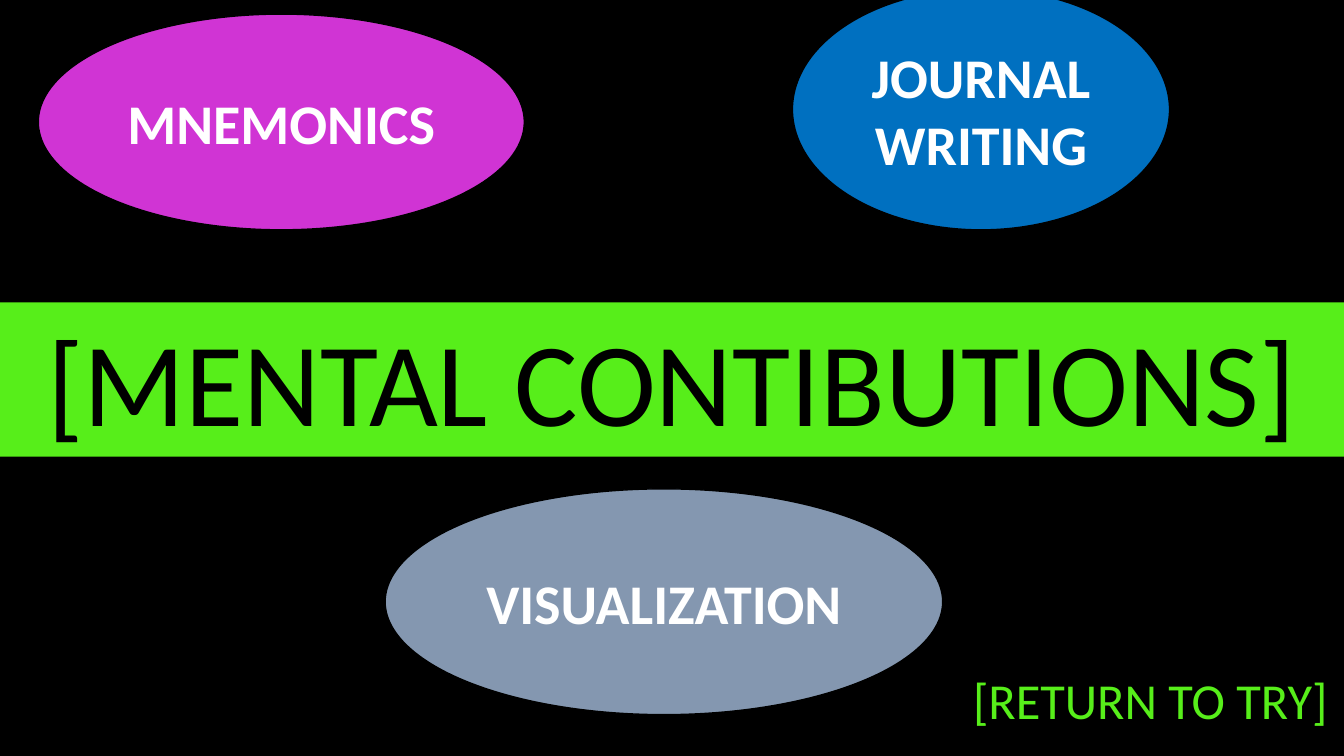
from dataclasses import dataclass

import pptx
import pptx.dml.color
import pptx.enum.shapes
import pptx.enum.text
import pptx.shapes.autoshape
import pptx.util

Inches = pptx.util.Inches
RGB = pptx.dml.color.RGBColor
Shape = pptx.shapes.autoshape.Shape


@dataclass(frozen=True)
class Theme:
    font: str = "Calibri"
    black: RGB = RGB(0x00, 0x00, 0x00)
    white: RGB = RGB(0xFF, 0xFF, 0xFF)
    green: RGB = RGB(0x57, 0xEE, 0x1A)
    magenta: RGB = RGB(0xD0, 0x34, 0xD4)
    slate: RGB = RGB(0x84, 0x97, 0xB0)
    blue: RGB = RGB(0x00, 0x70, 0xC0)
    title_size: int = 85
    strategy_size: int = 40
    return_size: int = 36


@dataclass(frozen=True)
class Strategy:
    label: str
    left: float
    top: float
    width: float
    height: float
    fill: RGB


THEME = Theme()
SLIDE_WIDTH = 13.33
STRATEGIES = [
    Strategy("MNEMONICS", 0.38, 0.14, 4.82, 2.14, THEME.magenta),
    Strategy("VISUALIZATION", 3.82, 4.85, 5.53, 2.24, THEME.slate),
    Strategy("JOURNAL WRITING", 7.86, -0.11, 3.74, 2.39, THEME.blue),
]


def write_centred(shape: Shape, text: str, size: int, color: RGB, bold: bool = False) -> None:
    frame = shape.text_frame
    frame.text = text
    frame.word_wrap = True
    paragraph = frame.paragraphs[0]
    paragraph.alignment = pptx.enum.text.PP_ALIGN.CENTER
    font = paragraph.runs[0].font
    font.name = THEME.font
    font.size = pptx.util.Pt(size)
    font.bold = bold
    font.color.rgb = color


def add_title_band(slide: pptx.slide.Slide) -> None:
    band = slide.shapes.add_shape(
        pptx.enum.shapes.MSO_SHAPE.RECTANGLE,
        Inches(0), Inches(3), Inches(SLIDE_WIDTH), Inches(1.53),
    )
    band.shadow.inherit = False
    band.fill.solid()
    band.fill.fore_color.rgb = THEME.green
    band.line.fill.background()
    write_centred(band, "[MENTAL CONTIBUTIONS]", THEME.title_size, THEME.black)
    band.text_frame.vertical_anchor = pptx.enum.text.MSO_ANCHOR.TOP
    band.text_frame.auto_size = pptx.enum.text.MSO_AUTO_SIZE.SHAPE_TO_FIT_TEXT


def add_strategy(slide: pptx.slide.Slide, strategy: Strategy) -> None:
    ellipse = slide.shapes.add_shape(
        pptx.enum.shapes.MSO_SHAPE.OVAL,
        Inches(strategy.left), Inches(strategy.top),
        Inches(strategy.width), Inches(strategy.height),
    )
    ellipse.shadow.inherit = False
    ellipse.fill.solid()
    ellipse.fill.fore_color.rgb = strategy.fill
    ellipse.line.color.rgb = THEME.black
    ellipse.line.width = pptx.util.Pt(1)
    write_centred(ellipse, strategy.label, THEME.strategy_size, THEME.white, bold=True)
    ellipse.text_frame.vertical_anchor = pptx.enum.text.MSO_ANCHOR.MIDDLE


def add_return_label(slide: pptx.slide.Slide) -> None:
    label = slide.shapes.add_textbox(Inches(9.49), Inches(6.59), Inches(3.84), Inches(0.71))
    write_centred(label, "[RETURN TO TRY]", THEME.return_size, THEME.green)
    label.text_frame.auto_size = pptx.enum.text.MSO_AUTO_SIZE.SHAPE_TO_FIT_TEXT


def main() -> None:
    presentation = pptx.Presentation()
    presentation.slide_width = Inches(SLIDE_WIDTH)
    presentation.slide_height = Inches(7.5)
    slide = presentation.slides.add_slide(presentation.slide_layouts[6])
    slide.background.fill.solid()
    slide.background.fill.fore_color.rgb = THEME.black

    add_title_band(slide)
    for strategy in STRATEGIES:
        add_strategy(slide, strategy)
    add_return_label(slide)
    presentation.save("out.pptx")


if __name__ == "__main__":
    main()
